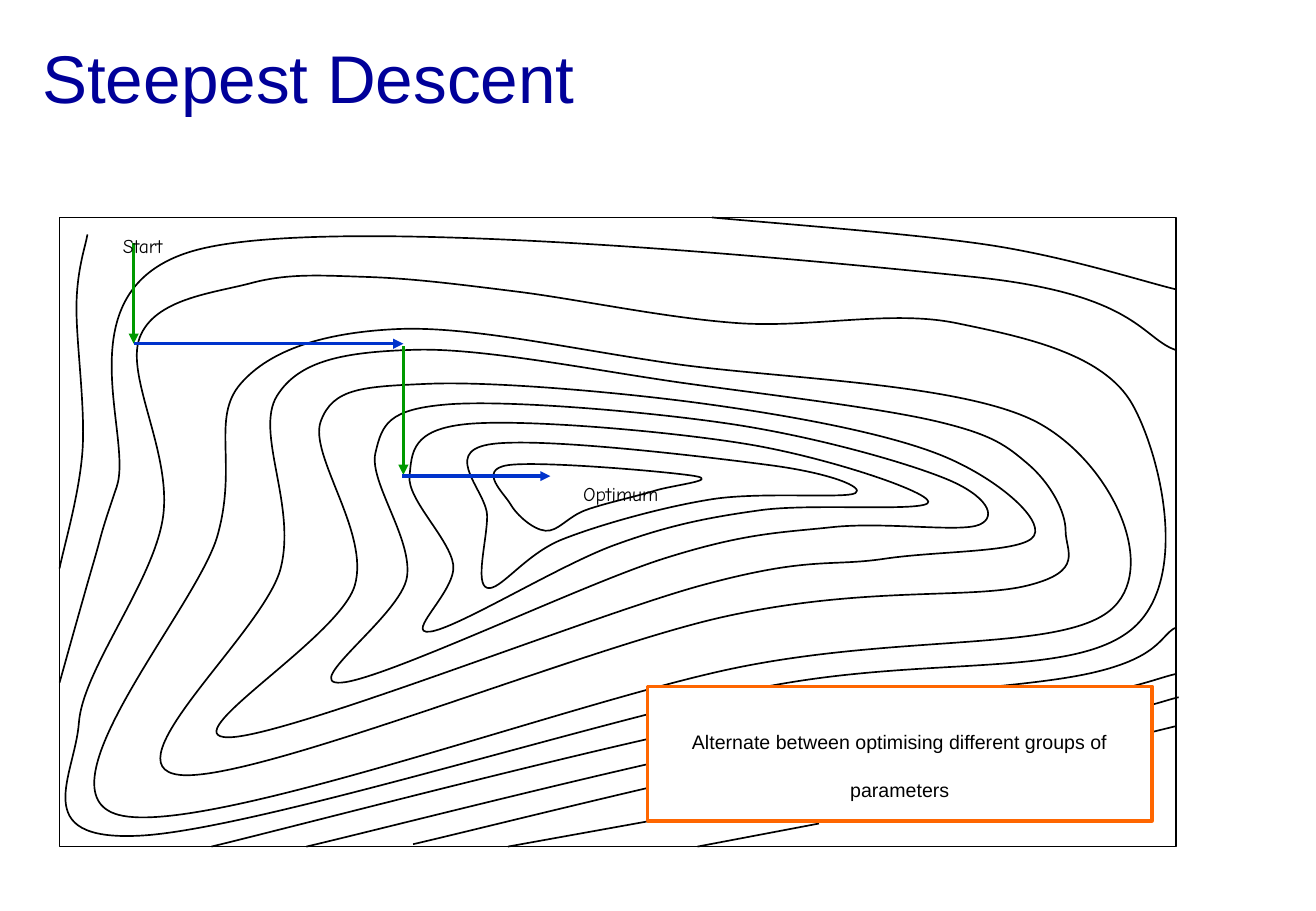
"""Build the Steepest Descent slide: a contour map with alternating search steps."""
from pptx import Presentation
from pptx.dml.color import RGBColor
from pptx.enum.shapes import MSO_CONNECTOR, MSO_SHAPE
from pptx.enum.text import MSO_ANCHOR, MSO_AUTO_SIZE, PP_ALIGN
from pptx.oxml import parse_xml
from pptx.oxml.ns import nsdecls, qn
from pptx.oxml.xmlchemy import OxmlElement
from pptx.util import Inches, Pt

STRAIGHT, RECTANGLE = MSO_CONNECTOR.STRAIGHT, MSO_SHAPE.RECTANGLE
TOP, MIDDLE = MSO_ANCHOR.TOP, MSO_ANCHOR.MIDDLE
LEFT, CENTER = PP_ALIGN.LEFT, PP_ALIGN.CENTER
GROW, FIXED = MSO_AUTO_SIZE.SHAPE_TO_FIT_TEXT, MSO_AUTO_SIZE.NONE

THEME = {
    "title": RGBColor.from_string("000099"), "ink": RGBColor.from_string("000000"),
    "paper": RGBColor.from_string("FFFFFF"), "callout": RGBColor.from_string("FF6600"),
    "down": RGBColor.from_string("009900"), "across": RGBColor.from_string("0033CC"),
    "title_size": Pt(40), "body_size": Pt(20), "thin": Pt(1), "thick": Pt(2),
    "font": "Arial", "label_font": "Comic Neue", "subscript": "-30000",
}

CLOSED_CONTOURS = [
    [(1.79, 4.41), (1.98, 3.16), (3.26, 2.71), (5.51, 2.99), (8.56, 3.49), (9.13, 5.03),
     (6.05, 5.5), (0.98, 6.71)],
    [(1.34, 4.27), (1.15, 2.78), (2.07, 2.33), (3.02, 2.28), (4.25, 2.4), (6.07, 2.66),
     (7.87, 2.66), (9.32, 3.33), (9.29, 5.2), (6.22, 5.67), (1.15, 6.88), (0.65, 5.95)],
    [(2.31, 4.68), (2.28, 3.26), (3.42, 2.88), (5.67, 3.16), (7.71, 3.47), (8.46, 3.82),
     (8.77, 4.37), (8.46, 4.82), (5.95, 5.08), (1.48, 6.38)],
    [(2.92, 4.82), (2.64, 3.47), (3.52, 3.16), (5.84, 3.33), (7.75, 3.75), (8.51, 4.41),
     (7.28, 4.6), (5.77, 4.82), (1.88, 6.07)],
    [(3.35, 4.75), (3.09, 3.73), (3.68, 3.33), (6.01, 3.49), (7.78, 3.94), (8.06, 4.32),
     (6.85, 4.34), (5.46, 4.6), (2.81, 5.62)],
    [(3.73, 4.65), (3.37, 3.92), (3.85, 3.49), (6.17, 3.66), (7.64, 4.13), (6.26, 4.2),
     (5.05, 4.49), (3.54, 5.2)],
    [(4.01, 4.84), (4.01, 4.25), (4.02, 3.66), (6.34, 3.83), (7.04, 4.06), (5.86, 4.11),
     (4.63, 4.44)],
    [(4.49, 4.37), (4.2, 4.15), (4.18, 3.83), (5.72, 3.92), (5.39, 4.04), (4.82, 4.2)],
]
OPEN_CONTOURS = [
    [(1.74, 6.97), (6.05, 5.93), (8.94, 5.55), (9.67, 5.17)],
    [(2.52, 6.97), (6.22, 6.1), (8.77, 5.76), (9.67, 5.55)],
    [(3.4, 6.95), (6.65, 6.2), (8.9, 5.92), (9.7, 5.74)],
    [(0.49, 5.62), (0.77, 4.63), (0.96, 4.01), (1.65, 2.05), (8.01, 2.28), (9.67, 2.88)],
    [(5.86, 1.79), (8.16, 2.02), (9.67, 2.38)],
    [(0.72, 1.93), (0.63, 2.5), (0.68, 3.7), (0.49, 4.68)],
]
STRAIGHT_LINES = [
    ("ink", "thin", (4.18, 6.97, 6.12, 6.62)), ("ink", "thin", (5.74, 6.97, 6.74, 6.78)),
    ("ink", "thin", (9.1, 6.12, 9.67, 5.98)),
    ("down", "thick", (1.1, 2, 1.1, 2.83)), ("across", "thick", (1.1, 2.83, 3.32, 2.83)),
    ("down", "thick", (3.32, 2.85, 3.32, 3.91)), ("across", "thick", (3.31, 3.92, 4.53, 3.92)),
]


def outline(shape, color, width):
    shape.line.color.rgb = THEME[color]
    shape.line.width = THEME[width]


def write(shape, text, font, size, color, align, subscript, **frame_format):
    for attribute, value in frame_format.items():
        setattr(shape.text_frame, attribute, value)
    paragraph = shape.text_frame.paragraphs[0]
    paragraph.alignment = align
    run = paragraph.add_run()
    run.text = text
    run.font.name, run.font.size = THEME[font], THEME[size]
    run.font.color.rgb = THEME[color]
    if subscript:
        run.font._element.set("baseline", THEME["subscript"])


prs = Presentation()
prs.slide_width, prs.slide_height = Inches(10.83), Inches(7.5)
slide = prs.slides.add_slide(prs.slide_layouts[6])
shapes = slide.shapes

title = shapes.add_textbox(*map(Inches, (0.25, 0.25, 10.33, 1.25)))
write(title, "Steepest Descent", "font", "title_size", "title", LEFT, False,
      word_wrap=True, vertical_anchor=TOP)

map_frame = shapes.add_shape(RECTANGLE, *map(Inches, (0.49, 1.79, 9.19, 5.18)))
map_frame.shadow.inherit = False
map_frame.fill.background()
outline(map_frame, "ink", "thin")

for contours, closed in ((CLOSED_CONTOURS, True), (OPEN_CONTOURS, False)):
    for points in contours:
        knots = [(Inches(x), Inches(y)) for x, y in points]
        if closed:
            padded = [knots[-1], *knots, *knots[:2]]
        else:
            padded = [knots[0], *knots, knots[-1]]
        bends = []
        for before, start, end, after in zip(padded, padded[1:], padded[2:], padded[3:]):
            leaving = [s + (e - b) / 6 for b, s, e in zip(before, start, end)]
            arriving = [e - (a - s) / 6 for s, e, a in zip(start, end, after)]
            bends += [leaving, arriving, end]
        builder = shapes.build_freeform(*knots[0])
        builder.add_line_segments(bends, close=closed)
        contour = builder.convert_to_shape()
        contour.shadow.inherit = False
        contour.fill.background()
        outline(contour, "ink", "thin")
        segments = list(contour._element.iter(qn("a:lnTo")))
        for first in range(0, len(segments), 3):
            curve = OxmlElement("a:cubicBezTo")
            segments[first].addprevious(curve)
            for segment in segments[first:first + 3]:
                curve.append(segment[0])
                segment.getparent().remove(segment)

for color, width, ends in STRAIGHT_LINES:
    step = shapes.add_connector(STRAIGHT, *map(Inches, ends))
    outline(step, color, width)
    if color != "ink":
        step.line._get_or_add_ln().append(parse_xml(f'<a:tailEnd {nsdecls("a")} type="triangle"/>'))
    step._element.spPr.append(OxmlElement("a:effectLst"))

for label, place, wraps in (("Start", (0.71, 1.71, 0.93, 0.43), True),
                            ("Optimum", (4.43, 3.75, 1.36, 0.43), False)):
    marker = shapes.add_textbox(*map(Inches, place))
    write(marker, label, "label_font", "body_size", "ink", CENTER, True,
          word_wrap=wraps, vertical_anchor=MIDDLE, auto_size=GROW)

callout = shapes.add_shape(RECTANGLE, *map(Inches, (5.33, 5.65, 4.15, 1.11)))
callout.shadow.inherit = False
callout.fill.solid()
callout.fill.fore_color.rgb = THEME["paper"]
outline(callout, "callout", "thick")
write(callout, "Alternate between optimising different groups of parameters", "font", "body_size",
      "ink", CENTER, True, word_wrap=True, vertical_anchor=MIDDLE, auto_size=FIXED)

prs.save("out.pptx")
